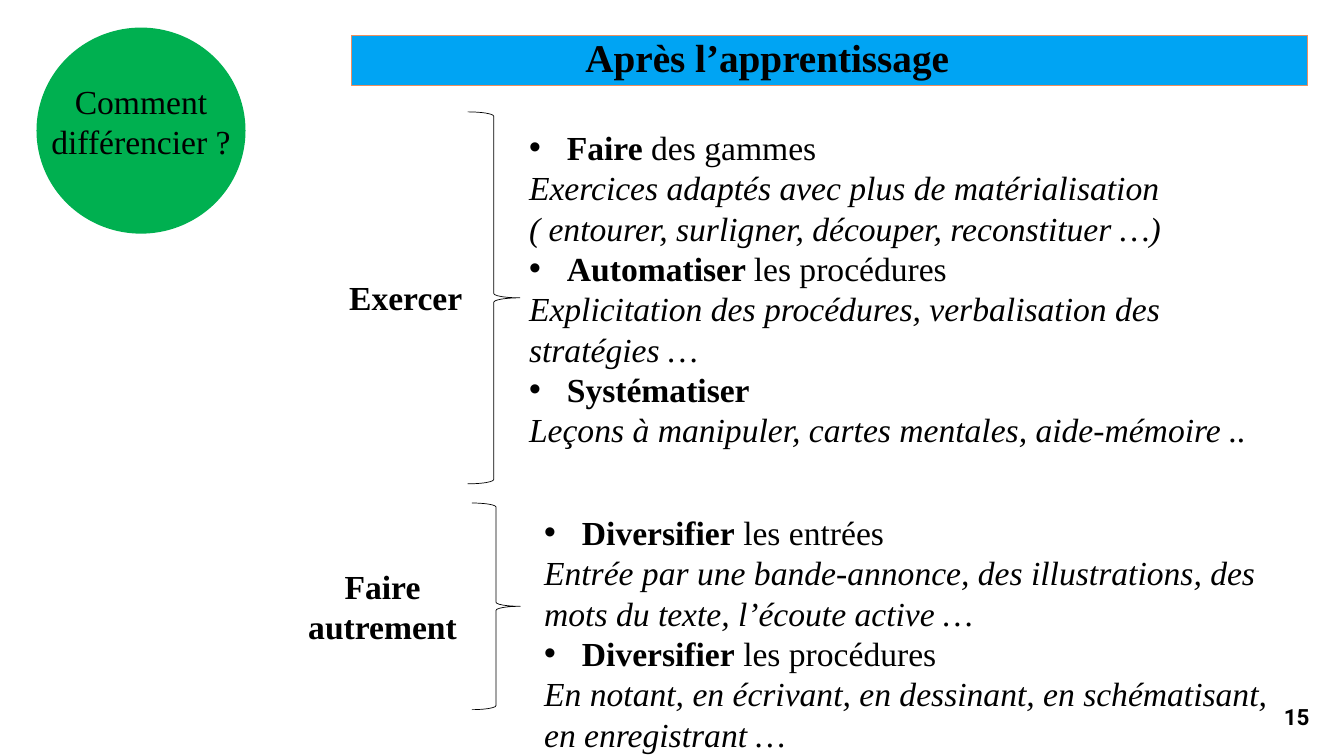
from lxml import etree
from pptx import Presentation
from pptx.dml.color import RGBColor
from pptx.enum import shapes, text
from pptx.oxml import ns
from pptx.util import Pt

BLACK = RGBColor(0x00, 0x00, 0x00)
GREEN = RGBColor(0x00, 0xB0, 0x50)
BLUE = RGBColor(0x00, 0xA4, 0xF3)
ORANGE = RGBColor(0xEB, 0x8F, 0x60)
SERIF, SANS = "Times New Roman", "Roboto"
BULLET_INDENT = Pt(27)

QUESTION = "Comment différencier ?"
TITLE = "Après l’apprentissage"
PAGE = "15"

# Boxes are left, top, width, height in points; items are bold part, plain part, detail.
SECTIONS = [
    {
        "label": "Exercer",
        "label_box": (234, 194.4, 111.6, 36),
        "brace_box": (334, 79.9, 37.4, 265.7),
        "items_box": (370.8, 87.1, 562.3, 239.8),
        "items": [
            ("Faire ", "des gammes",
             "Exercices adaptés avec plus de matérialisation "
             "( entourer, surligner, découper, reconstituer …)"),
            ("Automatiser ", "les procédures",
             "Explicitation des procédures, verbalisation des stratégies …"),
            ("Systématiser", "",
             "Leçons à manipuler, cartes mentales, aide-mémoire .."),
        ],
    },
    {
        "label": "Faire autrement",
        "label_box": (208.8, 400.3, 128.9, 65.5),
        "brace_box": (337, 359.3, 34.6, 147.6),
        "items_box": (381.6, 362.2, 551.5, 181.4),
        "items": [
            ("Diversifier", " les entrées",
             "Entrée par une bande-annonce, des illustrations, "
             "des mots du texte, l’écoute active …"),
            ("Diversifier", " les procédures",
             "En notant, en écrivant, en dessinant, en schématisant, "
             "en enregistrant …"),
        ],
    },
]

deck = Presentation()
deck.slide_width, deck.slide_height = Pt(960), Pt(540)
slide = deck.slides.add_slide(deck.slide_layouts[6])


def add_outline(kind, box, line, width, fill=None):
    outline = slide.shapes.add_shape(kind, *map(Pt, box))
    outline.shadow.inherit = False
    if fill is None:
        outline.fill.background()
    else:
        outline.fill.solid()
        outline.fill.fore_color.rgb = fill
    outline.line.color.rgb = line
    outline.line.width = Pt(width)


def add_frame(box, anchor=text.MSO_ANCHOR.TOP):
    frame = slide.shapes.add_textbox(*map(Pt, box)).text_frame
    frame.word_wrap = True
    frame.vertical_anchor = anchor
    return frame


def write(paragraph, words, size=24, font=SERIF, bold=False, italic=False,
          align=text.PP_ALIGN.LEFT):
    paragraph.alignment = align
    run = paragraph.add_run()
    run.text = words
    run.font.size, run.font.name = Pt(size), font
    run.font.bold, run.font.italic = bold, italic
    run.font.color.rgb = BLACK


def add_bullet(paragraph):
    props = paragraph._p.get_or_add_pPr()
    props.set("marL", str(BULLET_INDENT))
    props.set("indent", str(-BULLET_INDENT))
    etree.SubElement(props, ns.qn("a:buFont")).set("typeface", "Arial")
    etree.SubElement(props, ns.qn("a:buChar")).set("char", "•")


def add_items(box, items):
    frame = add_frame(box)
    for index, (action, rest, detail) in enumerate(items):
        heading = frame.add_paragraph() if index else frame.paragraphs[0]
        add_bullet(heading)
        write(heading, action, bold=True)
        if rest:
            write(heading, rest)
        write(frame.add_paragraph(), detail, italic=True)


add_outline(shapes.MSO_SHAPE.OVAL, (26.6, 20.2, 148.3, 146.2), GREEN, 1, GREEN)
write(add_frame((26.6, 54, 148.3, 65.5)).paragraphs[0], QUESTION,
      align=text.PP_ALIGN.CENTER)
write(add_frame((894.2, 497.5, 48.2, 28.8), text.MSO_ANCHOR.MIDDLE).paragraphs[0],
      PAGE, size=16, font=SANS, bold=True, align=text.PP_ALIGN.RIGHT)

add_outline(shapes.MSO_SHAPE.RECTANGLE, (251.3, 25.2, 682.6, 36), ORANGE, 1, BLUE)
write(add_frame((411.1, 20.2, 362.9, 41)).paragraphs[0], TITLE, size=28, bold=True)

for section in SECTIONS:
    write(add_frame(section["label_box"]).paragraphs[0], section["label"],
          bold=True, align=text.PP_ALIGN.CENTER)
    add_outline(shapes.MSO_SHAPE.RIGHT_BRACE, section["brace_box"], BLACK, 0.5)
    add_items(section["items_box"], section["items"])

deck.save("out.pptx")
